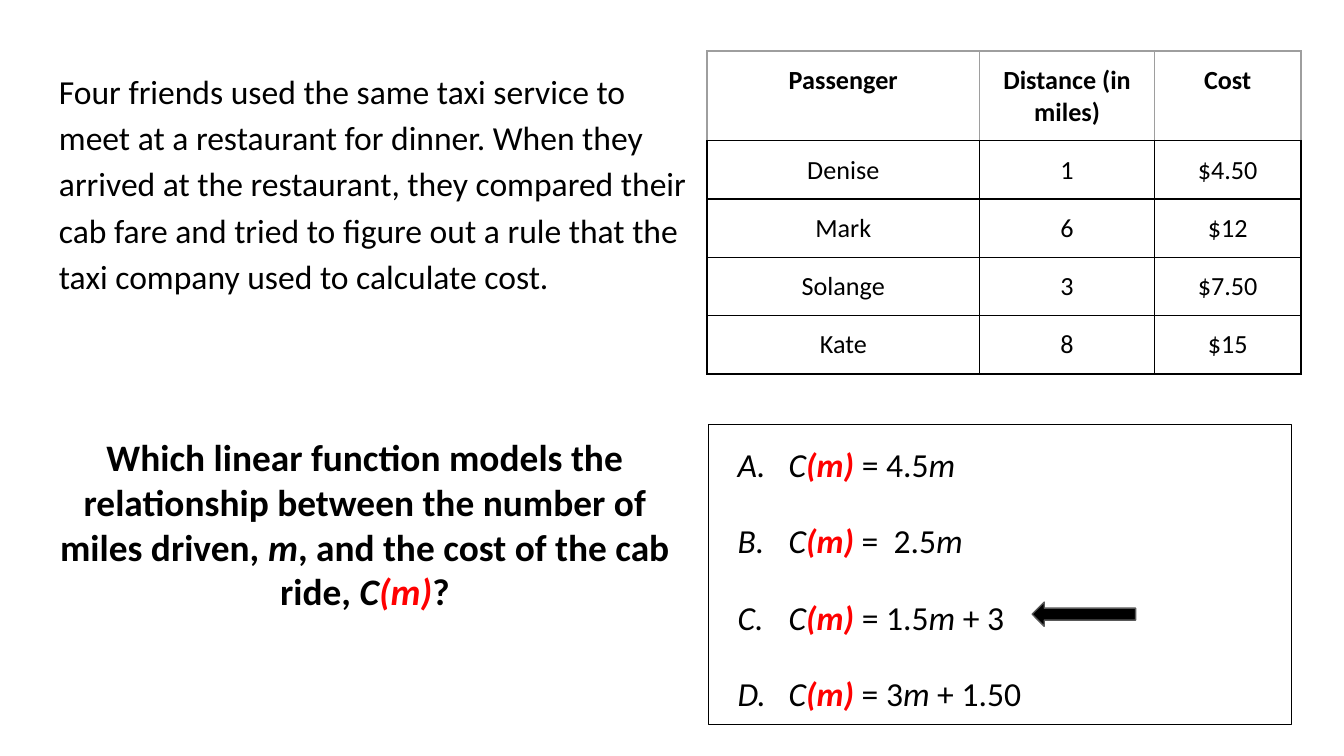
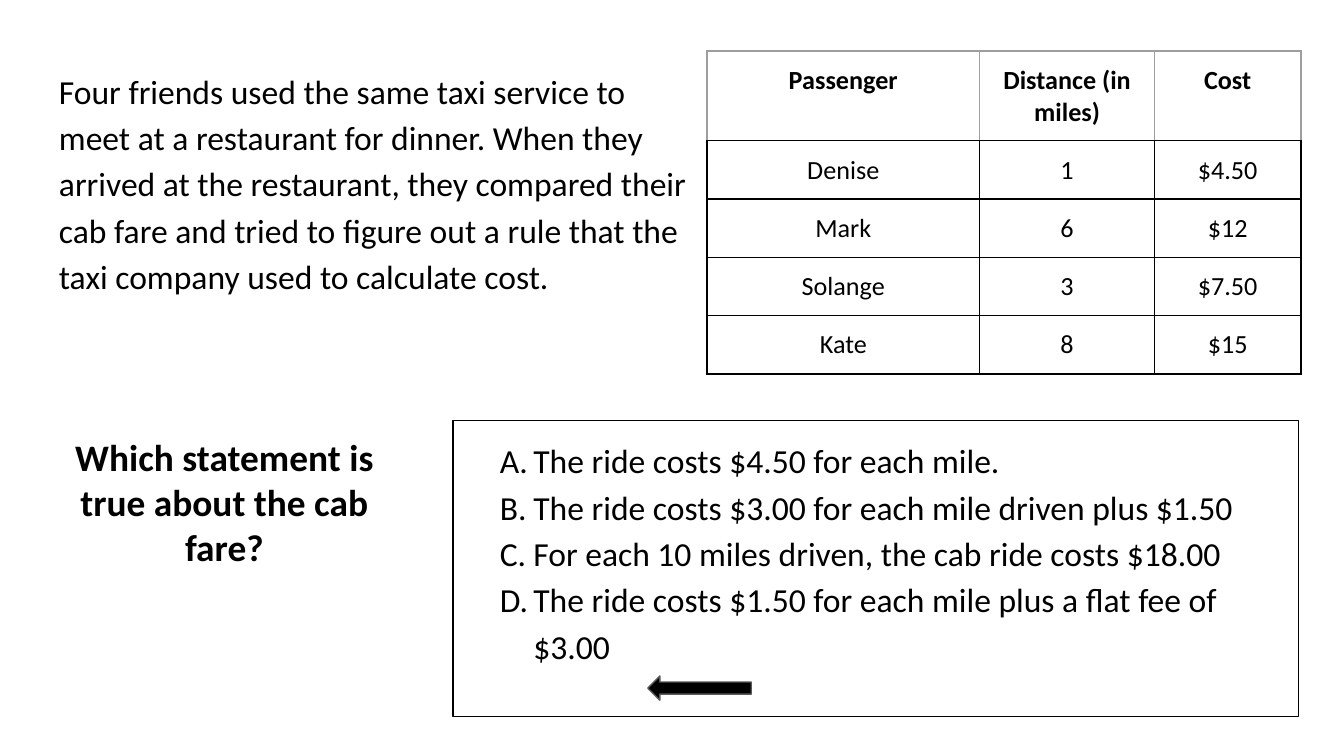
from lxml import etree
from pptx import Presentation
from pptx.dml.color import RGBColor
from pptx.enum.shapes import MSO_SHAPE
from pptx.enum.text import MSO_ANCHOR, PP_ALIGN
from pptx.oxml.ns import qn
from pptx.util import Pt

PX = 9144  # EMU per px, 100 px to the inch
WIDE = 1000 * PX
HIGH = WIDE * 9 // 16
RECT, ARROW = MSO_SHAPE.RECTANGLE, MSO_SHAPE.LEFT_ARROW
TOP, LEFT, MID = MSO_ANCHOR.TOP, PP_ALIGN.LEFT, PP_ALIGN.CENTER
FONT = "Calibri"
PAD = 10
HEX = {"ink": "000000", "paper": "FFFFFF", "red": "FF0000",
       "grey": "9E9E9E", "edge": "595959"}

STORY = ("Four friends used the same taxi service to meet at a restaurant for "
         "dinner. When they arrived at the restaurant, they compared their cab "
         "fare and tried to figure out a rule that the taxi company used to "
         "calculate cost.")
FARES = [
    ("Passenger", "Distance (in miles)", "Cost"),
    ("Denise", "1", "$4.50"),
    ("Mark", "6", "$12"),
    ("Solange", "3", "$7.50"),
    ("Kate", "8", "$15"),
]
COLS = (203, 130, 109)
ROW = 35

# A paragraph is a list of runs: (text, marks), marks being b(old), i(talic), r(ed).
SLIDES = [
    {
        "ask": [("Which linear function models the relationship between the "
                 "number of miles driven, ", "b"), ("m", "bi"),
                (", and the cost of the cab ride, ", "b"), ("C", "bi"),
                ("(m)", "bir"), ("?", "b")],
        "ask_box": (34, 313, 475, 190),
        "picks": [
            [("C", "i"), ("(m) ", "bir"), ("= 4.5", ""), ("m", "i")],
            [("C", "i"), ("(m)", "bir"), (" =  2.5", ""), ("m", "i")],
            [("C", "i"), ("(m) ", "bir"), ("= 1.5", ""), ("m", "i"), (" + 3", "")],
            [("C", "i"), ("(m)", "bir"), (" = 3", ""), ("m", "i"), (" + 1.50", "")],
        ],
        "pick_box": (527, 316, 434, 223),
        "hang": 38,
        "after": 16,
        "arrow": (768, 448),
    },
    {
        "ask": [("Which statement is true about the cab fare?", "b")],
        "ask_box": (34, 313, 266, 190),
        "picks": [
            [("The ride costs $4.50 for each mile.", "")],
            [("The ride costs $3.00 for each mile driven plus $1.50", "")],
            [("For each 10 miles driven, the cab ride costs $18.00", "")],
            [("The ride costs $1.50 for each mile plus a flat fee of $3.00", "")],
        ],
        "pick_box": (337, 313, 629, 220),
        "hang": 25,
        "after": 0,
        "arrow": (482, 503),
    },
]


def rgb(name):
    return RGBColor.from_string(HEX[name])


def emu(box):
    return [n * PX for n in box]


def letter(para, hang):
    """Number a paragraph A., B., C. with a hanging indent."""
    props = para._p.get_or_add_pPr()
    props.set("marL", str(50 * PX))
    props.set("indent", str(-hang * PX))
    tint = etree.SubElement(props, qn("a:buClr"))
    etree.SubElement(tint, qn("a:srgbClr"), val=HEX["ink"])
    etree.SubElement(props, qn("a:buAutoNum"), type="alphaUcPeriod")


def write(frame, paras, size=18, align=LEFT, lead=1.0, after=0, hang=None):
    frame.word_wrap = True
    frame.vertical_anchor = TOP
    frame.margin_left = frame.margin_right = PAD * PX
    frame.margin_top = frame.margin_bottom = PAD * PX
    for n, runs in enumerate(paras):
        para = frame.add_paragraph() if n else frame.paragraphs[0]
        para.alignment = align
        para.line_spacing = lead
        para.space_after = Pt(after)
        if hang is not None:
            letter(para, hang)
        for text, marks in runs:
            run = para.add_run()
            run.text = text
            font = run.font
            font.name, font.size = FONT, Pt(size)
            font.bold, font.italic = "b" in marks, "i" in marks
            font.color.rgb = rgb("red" if "r" in marks else "ink")


def add_text(slide, box, paras, **style):
    write(slide.shapes.add_textbox(*emu(box)).text_frame, paras, **style)


def add_form(slide, kind, box, line, fill=None):
    form = slide.shapes.add_shape(kind, *emu(box))
    form.shadow.inherit = False
    form.line.color.rgb = rgb(line)
    form.line.width = Pt(0.75)
    if fill:
        form.fill.solid()
        form.fill.fore_color.rgb = rgb(fill)
    else:
        form.fill.background()
    return form


def border(cell, head):
    props = cell._tc.get_or_add_tcPr()
    for side in "LRTB":
        name = "grey" if head and side != "B" else "ink"
        line = etree.SubElement(props, qn("a:ln" + side), w=str(Pt(0.75)))
        fill = etree.SubElement(line, qn("a:solidFill"))
        etree.SubElement(fill, qn("a:srgbClr"), val=HEX[name])


def add_fares(slide):
    box = (526, 38, sum(COLS), 240)
    frame = slide.shapes.add_table(len(FARES), len(COLS), *emu(box))
    table = frame.table
    table.first_row = table.horz_banding = False
    for col, width in zip(table.columns, COLS):
        col.width = width * PX
    for r, texts in enumerate(FARES):
        table.rows[r].height = ROW * PX
        for c, text in enumerate(texts):
            cell = table.cell(r, c)
            cell.margin_left = cell.margin_right = PAD * PX
            cell.margin_top = cell.margin_bottom = PAD * PX
            border(cell, r == 0)
            if r:
                cell.fill.solid()
                cell.fill.fore_color.rgb = rgb("paper")
            else:
                cell.fill.background()
            write(cell.text_frame, [[(text, "" if r else "b")]], size=14, align=MID)
    frame.height = box[3] * PX


def build(deck, page):
    slide = deck.slides.add_slide(deck.slide_layouts[6])
    add_text(slide, (34, 38, 492, 215), [[(STORY, "")]], lead=1.15, after=16)
    add_fares(slide)
    add_text(slide, page["ask_box"], [page["ask"]], size=20, align=MID)
    panel = add_form(slide, RECT, page["pick_box"], "ink")
    write(panel.text_frame, page["picks"], lead=1.15,
          after=page["after"], hang=page["hang"])
    add_form(slide, ARROW, (*page["arrow"], 77, 18), "edge", fill="ink")


def main():
    deck = Presentation()
    deck.slide_width, deck.slide_height = WIDE, HIGH
    for page in SLIDES:
        build(deck, page)
    deck.save("out.pptx")


if __name__ == "__main__":
    main()
